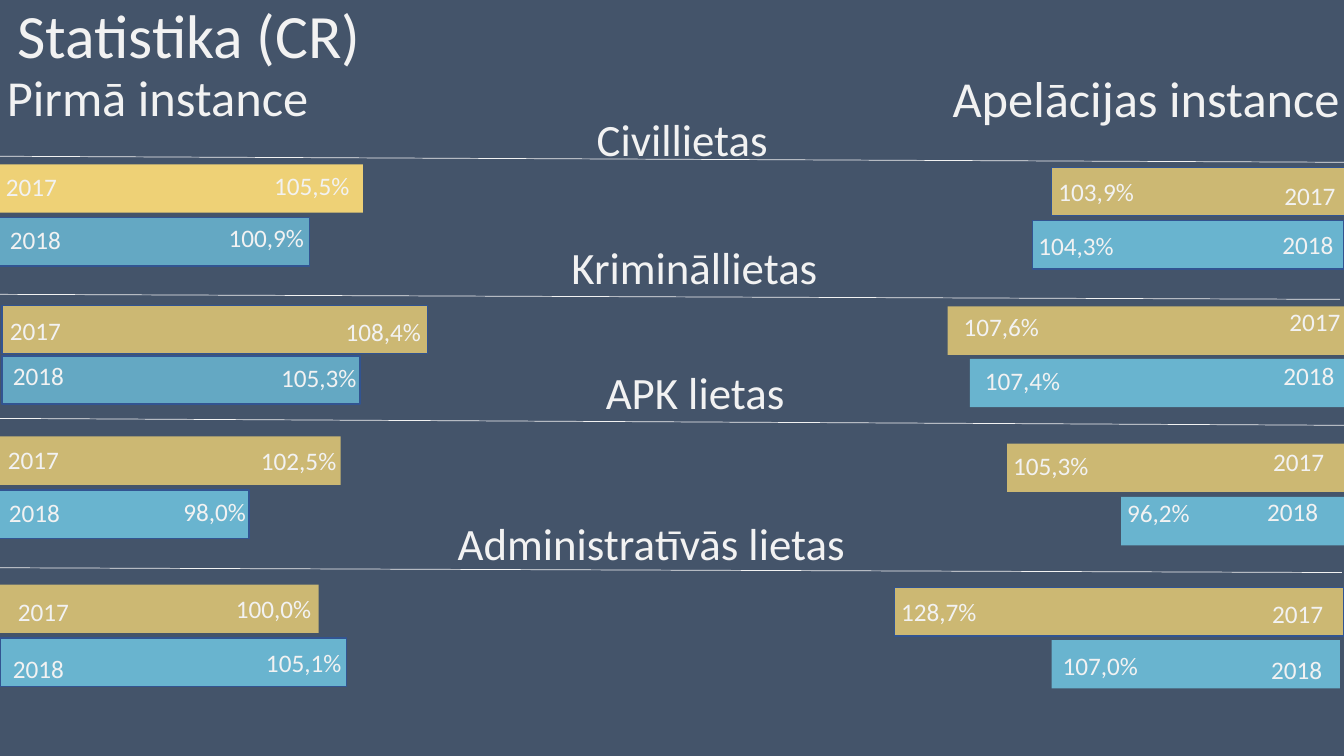
from dataclasses import dataclass

from pptx import Presentation
from pptx import util as u
from pptx.dml.color import RGBColor
from pptx.enum import shapes, text
from pptx.oxml.ns import qn
from lxml import etree

PX = 9144  # EMU in one px, 100 px to the inch
FONT = "Calibri"
COLORS = {
    "back": "44546A",
    "text": "F2F2F2",
    "2017": "EED176",
    "2018": "73CDE9",
    "outline": "325491",
}
BAR_H = 48
LABEL_W, LABEL_H = 114, 40


@dataclass
class Heading:
    text: str
    left: int
    top: int
    width: int
    height: int
    size: int
    align: text.PP_ALIGN = text.PP_ALIGN.LEFT


@dataclass
class Bar:
    year: str
    value: str
    left: int
    top: int
    width: int
    year_at: tuple[int, int]
    value_at: tuple[int, int]
    outlined: bool = False
    opacity: int = 80


@dataclass
class Rule:
    x1: int
    y1: int
    x2: int
    y2: int


HEADINGS = [
    Heading("Pirmā instance", -3, 61, 418, 71, 36),
    Heading("Apelācijas instance", 935, 62, 460, 71, 36),
    Heading("Civillietas", 582, 106, 247, 64, 32),
    Heading("Krimināllietas", 557, 233, 293, 64, 32),
    Heading("APK lietas", 591, 357, 255, 64, 32),
    Heading("Administratīvās lietas", 435, 507, 422, 64, 32, text.PP_ALIGN.CENTER),
]

FIRST_INSTANCE = [
    Bar("2017", "105,5%", -4, 163, 364, (-4, 165), (262, 164), opacity=100),
    Bar("2018", "100,9%", -2, 216, 309, (0, 218), (217, 216), True, 70),
    Bar("2017", "108,4%", 2, 303, 422, (0, 308), (333, 309), True),
    Bar("2018", "105,3%", 2, 353, 355, (3, 353), (269, 355), True, 70),
    Bar("2017", "102,5%", 0, 433, 338, (-2, 436), (249, 437)),
    Bar("2018", "98,0%", -3, 486, 250, (-1, 488), (172, 487), True),
    Bar("2017", "100,0%", 0, 580, 316, (8, 587), (224, 584)),
    Bar("2018", "105,1%", 0, 633, 344, (3, 643), (254, 637), True),
]

APPEAL_INSTANCE = [
    Bar("2017", "103,9%", 1043, 166, 291, (1264, 174), (1040, 170), True),
    Bar("2018", "104,3%", 1024, 219, 309, (1262, 223), (1020, 224), True),
    Bar("2017", "107,6%", 940, 304, 393, (1269, 299), (946, 304)),
    Bar("2018", "107,4%", 962, 356, 371, (1263, 353), (967, 358)),
    Bar("2017", "105,3%", 999, 440, 336, (1253, 438), (995, 442)),
    Bar("2018", "96,2%", 1112, 493, 221, (1247, 487), (1108, 488)),
    Bar("2017", "128,7%", 887, 583, 446, (1252, 589), (884, 587), True),
    Bar("2018", "107,0%", 1043, 635, 286, (1251, 644), (1044, 640)),
]

RULES = [
    Rule(-2, 155, 1333, 161),
    Rule(-6, 292, 1329, 297),
    Rule(-15, 415, 1342, 422),
    Rule(-71, 563, 1331, 568),
]


def px(*lengths: int) -> list[u.Emu]:
    return [u.Emu(n * PX) for n in lengths]


def color(name: str) -> RGBColor:
    return RGBColor.from_string(COLORS[name])


def write(tf, words: str, size: int, align=text.PP_ALIGN.LEFT) -> None:
    p = tf.paragraphs[0]
    p.alignment = align
    r = p.add_run()
    r.text = words
    r.font.name = FONT
    r.font.size = u.Pt(size)
    r.font.color.rgb = color("text")


def add_text(parent, h: Heading) -> None:
    sp = parent.add_textbox(*px(h.left, h.top, h.width, h.height))
    tf = sp.text_frame
    tf.word_wrap = True
    tf.auto_size = text.MSO_AUTO_SIZE.SHAPE_TO_FIT_TEXT
    write(tf, h.text, h.size, h.align)


def add_bar(parent, bar: Bar) -> None:
    group = parent.add_group_shape().shapes
    sp = group.add_shape(shapes.MSO_SHAPE.RECTANGLE,
                         *px(bar.left, bar.top, bar.width, BAR_H))
    sp.shadow.inherit = False
    sp.fill.solid()
    sp.fill.fore_color.rgb = color(bar.year)
    if bar.opacity < 100:
        rgb = sp._element.spPr.find(qn("a:solidFill")).find(qn("a:srgbClr"))
        etree.SubElement(rgb, qn("a:alpha"), val=str(bar.opacity * 1000))
    if bar.outlined:
        sp.line.color.rgb = color("outline")
        sp.line.width = u.Pt(1)
    else:
        sp.line.fill.background()
    for words, at in ((bar.value, bar.value_at), (bar.year, bar.year_at)):
        add_text(group, Heading(words, *at, LABEL_W, LABEL_H, 18))


def add_rule(parent, rule: Rule) -> None:
    line = parent.add_connector(shapes.MSO_CONNECTOR.STRAIGHT,
                                *px(rule.x1, rule.y1, rule.x2, rule.y2))
    line.line.color.rgb = color("text")
    line.line.width = u.Pt(0.5)
    etree.SubElement(line._element.spPr, qn("a:effectLst"))


def main() -> None:
    prs = Presentation()
    prs.slide_width, prs.slide_height = px(1333, 750)
    s = prs.slides.add_slide(prs.slide_layouts[5])
    s.background.fill.solid()
    s.background.fill.fore_color.rgb = color("back")

    # Title
    title = s.shapes.title
    title.left, title.top, title.width, title.height = px(7, -4, 1150, 85)
    tf = title.text_frame
    tf.auto_size = text.MSO_AUTO_SIZE.NONE
    tf.vertical_anchor = text.MSO_ANCHOR.MIDDLE
    write(tf, "Statistika (CR)", 44)
    tf.paragraphs[0].line_spacing = 0.9

    # Instance and case type headings
    for heading in HEADINGS:
        add_text(s.shapes, heading)

    # Clearance rate bars
    for bar in FIRST_INSTANCE + APPEAL_INSTANCE:
        add_bar(s.shapes, bar)

    # Lines under the case types
    for rule in RULES:
        add_rule(s.shapes, rule)

    prs.save("out.pptx")


if __name__ == "__main__":
    main()
